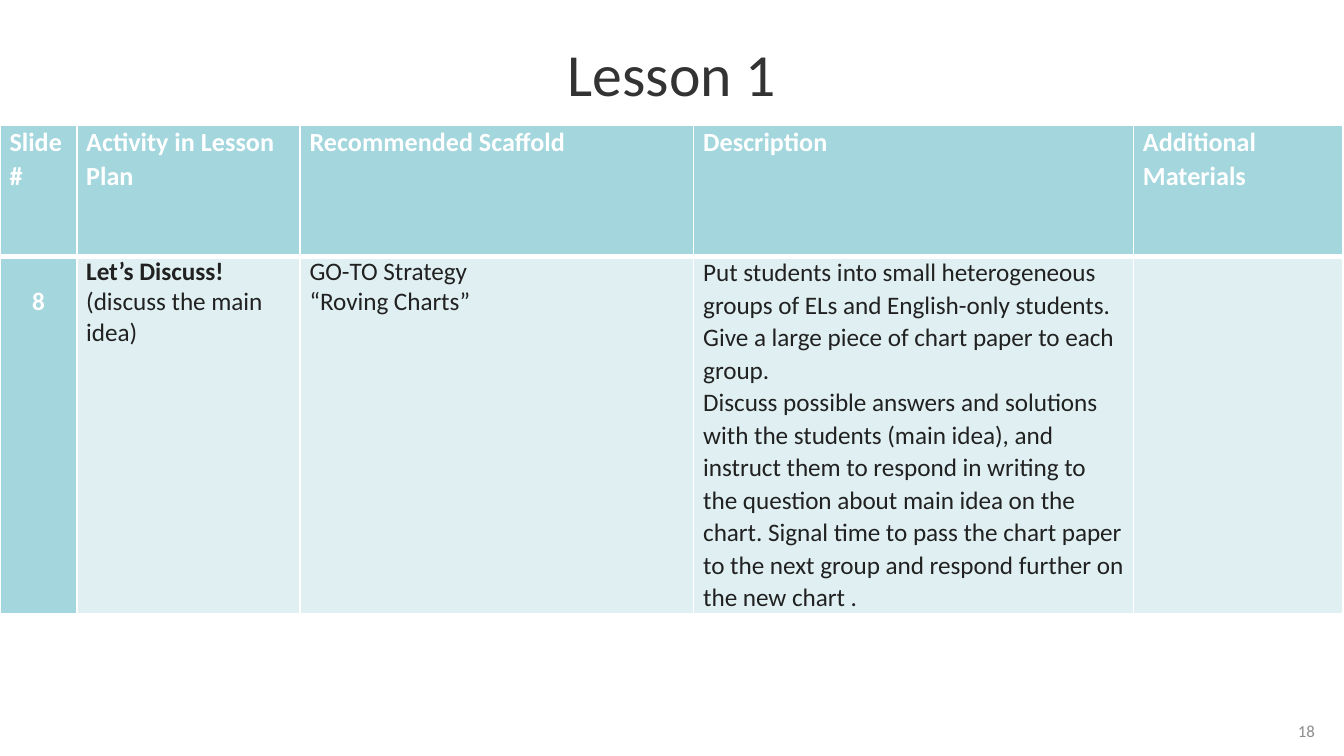
from lxml import etree
from pptx import Presentation
from pptx.dml.color import RGBColor
from pptx.enum.text import MSO_ANCHOR, PP_ALIGN
from pptx.oxml.ns import qn
from pptx.util import Cm, Pt

LEFT, MID, RIGHT = PP_ALIGN.LEFT, PP_ALIGN.CENTER, PP_ALIGN.RIGHT
CENTRE = MSO_ANCHOR.MIDDLE
FONT = "Calibri"
HEX = {"head": "A3D6DD", "body": "E0F0F2", "white": "FFFFFF",
       "ink": "212121", "title": "333333", "page": "8D8D8D"}
WIDTHS = [1.45, 4.22, 7.44, 8.31, 3.96]
HEIGHTS = [2.48, 6.7]
HEADS = ["Slide #", "Activity in Lesson Plan", "Recommended Scaffold",
         "Description", "Additional Materials"]
STEPS = [
    "Put students into small heterogeneous groups of ELs and English-only "
    "students. Give a large piece of chart paper to each group.",
    "Discuss possible answers and solutions with the students (main idea), "
    "and instruct them to respond in writing to the question about main idea "
    "on the chart. Signal time to pass the chart paper to the next group and "
    "respond further on the new chart .",
]
HEAD = {"size": Pt(14), "bold": True}
BODY = {"size": Pt(13.5), "bold": False}
BOLD = {"size": Pt(13.5), "bold": True}


def colour(name):
    return RGBColor.from_string(HEX[name])


def write(frame, lines, ink, align=LEFT, space=1.0):
    """Fill a text frame with (text, font format) pairs, one a paragraph."""
    for i, (text, form) in enumerate(lines):
        para = frame.add_paragraph() if i else frame.paragraphs[0]
        para.alignment = align
        para.line_spacing = space
        run = para.add_run()
        run.text = text
        run.font.name = FONT
        run.font.color.rgb = colour(ink)
        for key, value in form.items():
            setattr(run.font, key, value)


def place(shape, left, top, width, height):
    box = {"left": left, "top": top, "width": width, "height": height}
    for key, value in box.items():
        setattr(shape, key, Cm(value))


def add_title(slide):
    title = slide.shapes.title
    place(title, 0, 0, 25.4, 2.92)
    title.text_frame.vertical_anchor = CENTRE
    write(title.text_frame, [("Lesson 1", {"size": Pt(32)})], "title", MID, 0.9)


def add_page(slide):
    box = slide.shapes.add_textbox(Cm(18.9), Cm(13.34), Cm(6.2), Cm(0.96))
    box.text_frame.word_wrap = True
    box.text_frame.vertical_anchor = CENTRE
    write(box.text_frame, [("18", {"size": Pt(9)})], "page", RIGHT)


def add_edge(cell, tag, points):
    props = cell._tc.get_or_add_tcPr()
    line = etree.SubElement(props, qn(tag), w=str(Pt(points)))
    fill = etree.SubElement(line, qn("a:solidFill"))
    etree.SubElement(fill, qn("a:srgbClr"), val=HEX["white"])


def style_cell(cell, fill, top, base):
    """Set insets, white edges (top and base in points) and fill."""
    insets = {"margin_left": 0.18, "margin_right": 0.18,
              "margin_top": 0, "margin_bottom": 0}
    for key, value in insets.items():
        setattr(cell, key, Cm(value))
    edges = {"a:lnL": 1, "a:lnR": 1, "a:lnT": top, "a:lnB": base}
    for tag, points in edges.items():
        add_edge(cell, tag, points)
    cell.fill.solid()
    cell.fill.fore_color.rgb = colour(fill)


def add_plan(slide):
    table = slide.shapes.add_table(
        len(HEIGHTS), len(WIDTHS), Cm(0), Cm(2.36),
        Cm(sum(WIDTHS)), Cm(sum(HEIGHTS))).table
    for col, width in zip(table.columns, WIDTHS):
        col.width = Cm(width)
    for row, height in zip(table.rows, HEIGHTS):
        row.height = Cm(height)

    for i, text in enumerate(HEADS):
        cell = table.cell(0, i)
        style_cell(cell, "head", 1, 3)
        write(cell.text_frame, [(text, HEAD)], "white", space=1.06)

    cells = [
        ([("8", BOLD)], "white", MID, 2.0),
        ([("Let’s Discuss!", BOLD), ("(discuss the main idea)", BODY)], "ink"),
        ([("GO-TO Strategy", BODY), ("“Roving Charts”", BODY)], "ink"),
        ([(step, BODY) for step in STEPS], "ink", LEFT, 1.06),
        ([], "ink"),
    ]
    for i, content in enumerate(cells):
        cell = table.cell(1, i)
        style_cell(cell, "body" if i else "head", 3, 1)
        write(cell.text_frame, *content)


def main():
    deck = Presentation()
    deck.slide_width, deck.slide_height = Cm(25.4), Cm(14.29)
    slide = deck.slides.add_slide(deck.slide_layouts[5])
    add_title(slide)
    add_plan(slide)
    add_page(slide)
    deck.save("out.pptx")


if __name__ == "__main__":
    main()
